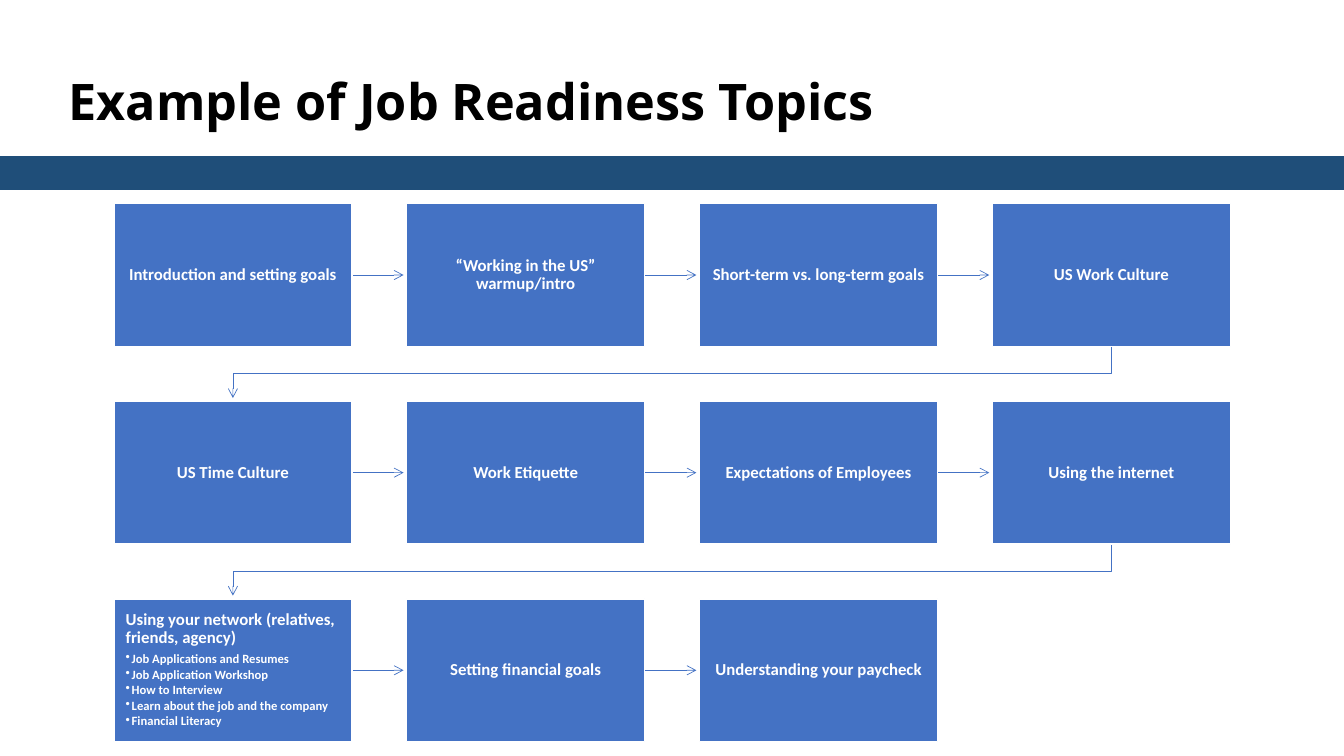
"""Build a slide showing job readiness topics as a snaking flow of boxes."""
from dataclasses import dataclass

from lxml.etree import SubElement
from pptx import Presentation
from pptx.dml.color import RGBColor
from pptx.enum.shapes import MSO_CONNECTOR as Connector, MSO_SHAPE as Shape
from pptx.enum.text import MSO_ANCHOR as Anchor, PP_ALIGN as Align
from pptx.oxml.ns import qn
from pptx.util import Cm, Pt


@dataclass(frozen=True)
class Theme:
    ink = RGBColor.from_string("000000")
    band = RGBColor.from_string("1F4E79")
    box = RGBColor.from_string("4472C4")
    paper = RGBColor.from_string("FFFFFF")
    title_font = "Open Sans"
    body_font = "Calibri"
    title_size = 36
    topic_size = 12
    detail_size = 9


theme = Theme()


def write(frame, text, size=theme.topic_size, font=theme.body_font, color=theme.paper,
          align=Align.LEFT, spacing=0.9, after=0, bullet=False):
    paragraph = frame.paragraphs[-1] if not frame.text else frame.add_paragraph()
    paragraph.alignment = align
    paragraph.line_spacing = spacing
    paragraph.space_after = Pt(after)
    if bullet:
        paragraph.level = 1
        properties = paragraph._p.get_or_add_pPr()
        properties.set("marL", str(Cm(0.15)))
        properties.set("indent", str(-Cm(0.15)))
        SubElement(properties, qn("a:buChar"), char="•")
    run = paragraph.add_run()
    run.text = text
    run.font.size = Pt(size)
    run.font.name = font
    run.font.bold = True
    run.font.color.rgb = color


def make_arrow(route):
    route.line.color.rgb = theme.box
    route.line.width = Pt(0.5)
    properties = route.element.spPr
    SubElement(properties.find(qn("a:ln")), qn("a:tailEnd"), type="arrow")
    SubElement(properties, qn("a:effectLst"))


topics = [
    "Introduction and setting goals", "“Working in the US” warmup/intro",
    "Short-term vs. long-term goals", "US Work Culture",
    "US Time Culture", "Work Etiquette",
    "Expectations of Employees", "Using the internet",
    "Using your network (relatives, friends, agency)", "Setting financial goals",
    "Understanding your paycheck",
]
details = {
    "Using your network (relatives, friends, agency)": [
        "Job Applications and Resumes", "Job Application Workshop", "How to Interview",
        "Learn about the job and the company", "Financial Literacy",
    ],
}

columns = 4
grid_left, grid_top = Cm(2.87), Cm(5.13)
box_width, box_height = Cm(6), Cm(3.6)
column_step, row_step = Cm(7.38), Cm(4.98)
arrow_length = Cm(1.3)
turn_drop = Cm(0.68)

deck = Presentation()
deck.slide_width, deck.slide_height = Cm(33.87), Cm(19.05)
slide = deck.slides.add_slide(deck.slide_layouts[6])
shapes = slide.shapes

title = shapes.add_textbox(Cm(1.47), Cm(1.63), Cm(31.06), Cm(3.68)).text_frame
title.word_wrap = True
write(title, "Example of Job Readiness Topics", size=theme.title_size,
      font=theme.title_font, color=theme.ink, spacing=1.0)

band = shapes.add_shape(Shape.RECTANGLE, 0, Cm(3.96), deck.slide_width, Cm(0.8))
band.shadow.inherit = False
band.fill.solid()
band.fill.fore_color.rgb = theme.band
band.line.color.rgb = theme.band
band.line.width = Pt(1)

for position, topic in enumerate(topics):
    row, column = divmod(position, columns)
    left = grid_left + column * column_step
    top = grid_top + row * row_step
    right, bottom = left + box_width, top + box_height
    is_last = position == len(topics) - 1

    if column == columns - 1:
        start = left + box_width // 2
        end = grid_left + box_width // 2
        turn = bottom + turn_drop
        route = shapes.build_freeform(start, bottom)
        route.add_line_segments(
            [(start, turn), (end, turn), (end, bottom + arrow_length)], close=False)
        return_arrow = route.convert_to_shape()
        return_arrow.fill.background()
        make_arrow(return_arrow)
    elif not is_last:
        middle = top + box_height // 2
        make_arrow(shapes.add_connector(
            Connector.STRAIGHT, right, middle, right + arrow_length, middle))

    box = shapes.add_shape(Shape.RECTANGLE, left, top, box_width, box_height)
    box.shadow.inherit = False
    box.fill.solid()
    box.fill.fore_color.rgb = theme.box
    box.line.color.rgb = theme.paper
    box.line.width = Pt(1)

    label = box.text_frame
    label.word_wrap = True
    label.margin_left = label.margin_right = Cm(0.3)
    label.margin_top = label.margin_bottom = Cm(0.3)
    has_details = topic in details
    label.vertical_anchor = Anchor.TOP if has_details else Anchor.MIDDLE
    write(label, topic, align=Align.LEFT if has_details else Align.CENTER, after=4.2)
    for detail in details.get(topic, []):
        write(label, detail, size=theme.detail_size, after=1.35, bullet=True)

deck.save("out.pptx")
